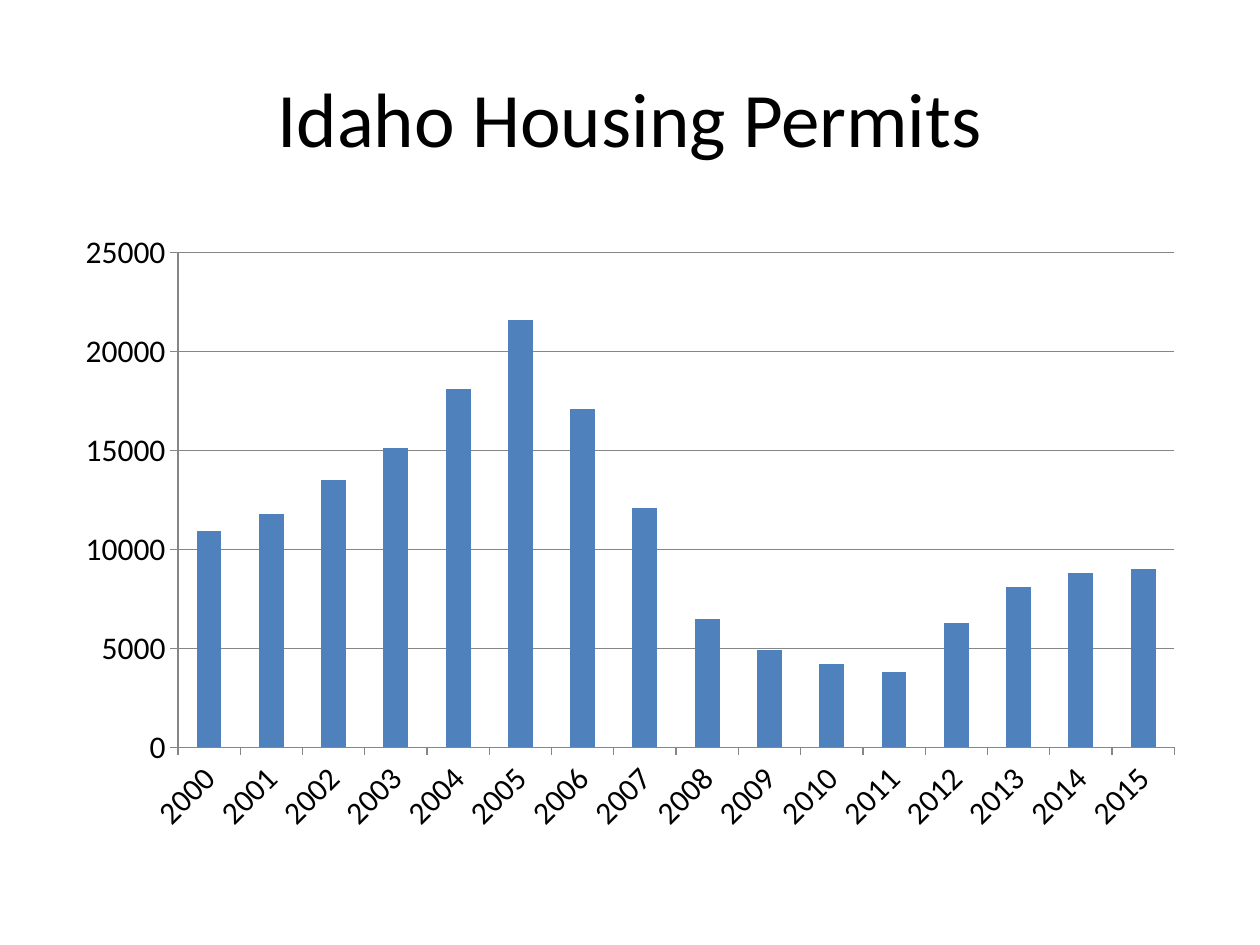
from pptx import Presentation
from pptx.chart.data import CategoryChartData
from pptx.dml.color import RGBColor
from pptx.enum.chart import XL_CHART_TYPE, XL_TICK_MARK
from pptx.enum.text import MSO_ANCHOR, PP_ALIGN
from pptx.util import Cm, Pt

BLACK = RGBColor(0x00, 0x00, 0x00)
BAR_BLUE = RGBColor(0x4F, 0x81, 0xBD)
LINE_GRAY = RGBColor(0x86, 0x86, 0x86)
FONT = "Calibri"
LEFT, WIDTH = Cm(1.27), Cm(22.86)

FIRST_YEAR = 2000
PERMITS = [10900, 11800, 13500, 15100, 18100, 21600, 17100, 12100,
           6500, 4900, 4200, 3800, 6300, 8100, 8800, 9000]


def add_title(page, text: str) -> None:
    title = page.shapes.title
    title.left, title.top, title.width, title.height = LEFT, Cm(0.76), WIDTH, Cm(3.18)
    title.text_frame.vertical_anchor = MSO_ANCHOR.MIDDLE
    para = title.text_frame.paragraphs[0]
    para.alignment = PP_ALIGN.CENTER
    span = para.add_run()
    span.text = text
    span.font.name = FONT
    span.font.size = Pt(44)
    span.font.color.rgb = BLACK


def style_line(line) -> None:
    line.color.rgb = LINE_GRAY
    line.width = Pt(0.75)


def add_permit_chart(page) -> None:
    data = CategoryChartData()
    data.categories = [str(FIRST_YEAR + offset) for offset in range(len(PERMITS))]
    data.add_series("Series 1", PERMITS)
    chart = page.shapes.add_chart(
        XL_CHART_TYPE.COLUMN_CLUSTERED, LEFT, Cm(4.45), WIDTH, Cm(12.57), data
    ).chart
    chart.has_title = False
    chart.has_legend = False
    chart.font.name = FONT
    chart.font.size = Pt(18)
    chart.font.color.rgb = BLACK

    plot = chart.plots[0]
    plot.gap_width = 150
    plot.vary_by_categories = False
    bars = plot.series[0].format.fill
    bars.solid()
    bars.fore_color.rgb = BAR_BLUE

    years, amounts = chart.category_axis, chart.value_axis
    for axis in (years, amounts):
        axis.major_tick_mark = XL_TICK_MARK.OUTSIDE
        axis.minor_tick_mark = XL_TICK_MARK.NONE
        axis.tick_labels.font.size = Pt(18)
        style_line(axis.format.line)
    amounts.minimum_scale, amounts.maximum_scale = 0, 25000
    amounts.major_unit = 5000
    amounts.has_major_gridlines = True
    style_line(amounts.major_gridlines.format.line)


def main() -> None:
    deck = Presentation()
    deck.slide_width, deck.slide_height = Cm(25.4), Cm(19.05)
    page = deck.slides.add_slide(deck.slide_layouts[5])
    add_title(page, "Idaho Housing Permits")
    add_permit_chart(page)
    deck.save("out.pptx")


if __name__ == "__main__":
    main()
